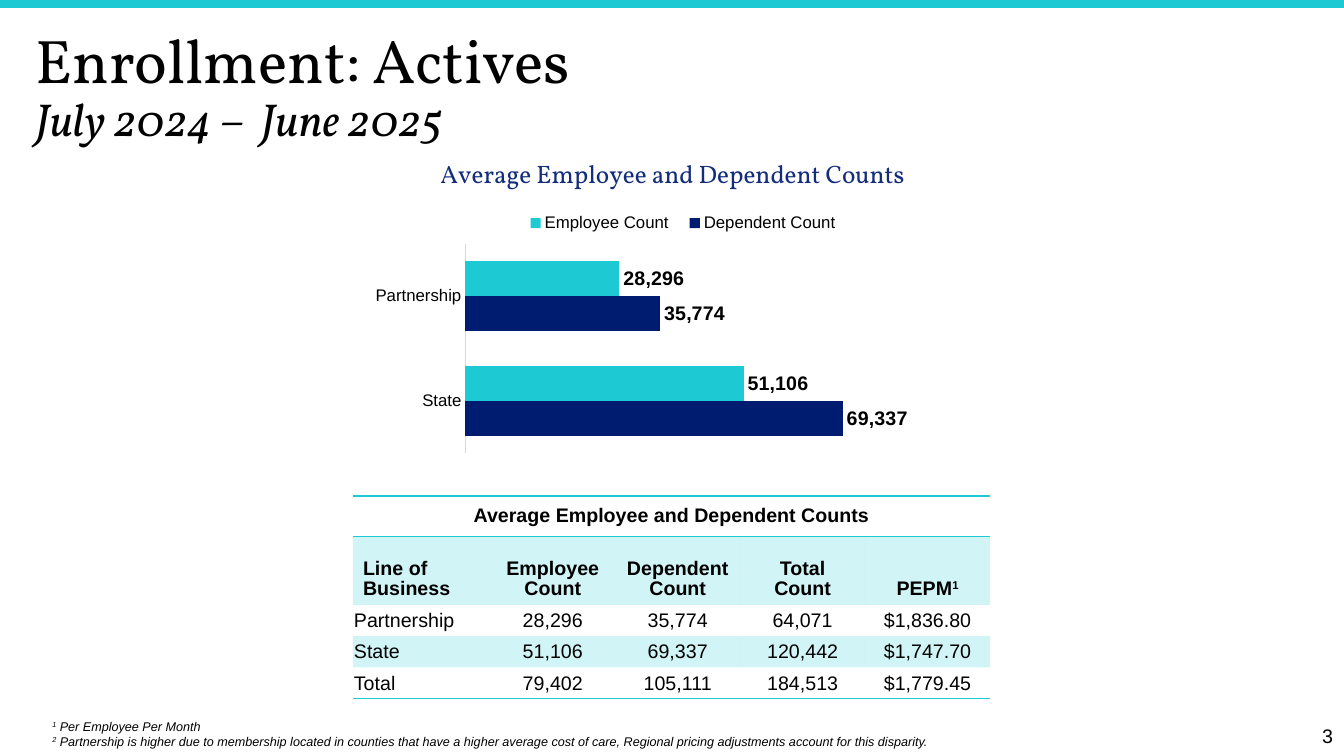
from collections import namedtuple

from lxml import etree
from pptx import Presentation
from pptx.chart.data import CategoryChartData
from pptx.dml.color import RGBColor
from pptx.enum.chart import XL_CHART_TYPE, XL_LABEL_POSITION, XL_LEGEND_POSITION, XL_TICK_MARK
from pptx.enum.shapes import MSO_CONNECTOR
from pptx.enum.text import MSO_ANCHOR, MSO_AUTO_SIZE, PP_ALIGN
from pptx.oxml.ns import qn
from pptx.util import Inches, Pt

BAR = XL_CHART_TYPE.BAR_CLUSTERED
OUTSIDE_END = XL_LABEL_POSITION.OUTSIDE_END
LEGEND_TOP = XL_LEGEND_POSITION.TOP
NO_TICKS = XL_TICK_MARK.NONE
STRAIGHT = MSO_CONNECTOR.STRAIGHT
TOP, MIDDLE, BOTTOM = MSO_ANCHOR.TOP, MSO_ANCHOR.MIDDLE, MSO_ANCHOR.BOTTOM
NO_FIT = MSO_AUTO_SIZE.NONE
LEFT, CENTER, RIGHT = PP_ALIGN.LEFT, PP_ALIGN.CENTER, PP_ALIGN.RIGHT

WIDTH, HEIGHT = Inches(13.33), Inches(7.5)
SANS, SERIF = "Arial", "Vollkorn"
BLACK, TEAL, NAVY, TITLE_BLUE, AXIS_GRAY = "000000", "1DCAD3", "001C71", "132D7C", "D9D9D9"
PLAIN_TABLE = "{2D5ABB26-0587-4C30-8999-92F81FD0307C}"
COUNT_FORMAT = "#,##0"

Box = namedtuple("Box", "left top width height")

CATEGORIES = ("State", "Partnership")
SERIES = (
    ("Dependent Count", (69337, 35774), NAVY),
    ("Employee Count", (51106, 28296), TEAL),
)
COUNTS_TITLE = "Average Employee and Dependent Counts"
HEADINGS = ("Line of Business", "Employee Count", "Dependent Count", "Total Count", "PEPM")
ROWS = (
    ("Partnership", "28,296", "35,774", "64,071", "$1,836.80"),
    ("State", "51,106", "69,337", "120,442", "$1,747.70"),
    ("Total", "79,402", "105,111", "184,513", "$1,779.45"),
)
COLUMN_WEIGHTS = (11, 10, 10, 10, 10)
ROW_WEIGHTS = (4, 6.8, 3.1, 3.1, 3.1)
FOOTNOTES = (
    ("1", " Per Employee Per Month"),
    ("2", " Partnership is higher due to membership located in counties that have a higher "
          "average cost of care, Regional pricing adjustments account for this disparity."),
)


def color(hex_text):
    """Return the colour for a hex string."""
    return RGBColor.from_string(hex_text)


def percent_box(left, top, width, height):
    """Turn percentages of the slide into a box of lengths."""
    return Box(int(WIDTH * left / 100), int(HEIGHT * top / 100),
               int(WIDTH * width / 100), int(HEIGHT * height / 100))


def style_font(font, size, name=SANS, fill=BLACK, bold=False, italic=False):
    """Format a font."""
    font.size, font.name, font.bold, font.italic = Pt(size), name, bold, italic
    font.color.rgb = color(fill)


def add_run(paragraph, text, size, raised=False, **style):
    """Add one formatted run, superscript if raised."""
    run = paragraph.add_run()
    run.text = text
    style_font(run.font, size, **style)
    if raised:
        run.font._element.set("baseline", "30000")


def add_text_frame(slide, box, anchor):
    """Add a wrapping text box and return its frame."""
    frame = slide.shapes.add_textbox(*box).text_frame
    frame.word_wrap, frame.auto_size, frame.vertical_anchor = True, NO_FIT, anchor
    return frame


def add_top_band(slide, box):
    """Draw the thick rule along the top edge."""
    middle = box.top + box.height // 2
    band = slide.shapes.add_connector(STRAIGHT, box.left, middle, box.left + box.width, middle)
    band.line.width, band.line.color.rgb = Pt(6), color(TEAL)
    etree.SubElement(band._element.spPr, qn("a:effectLst"))


def add_title(slide, box):
    """Fill the title placeholder with heading and period."""
    title = slide.shapes.title
    title.left, title.top, title.width, title.height = box
    frame = title.text_frame
    frame.word_wrap, frame.auto_size, frame.vertical_anchor = True, NO_FIT, TOP
    paragraph = frame.paragraphs[0]
    paragraph.alignment, paragraph.line_spacing = LEFT, 0.9
    add_run(paragraph, "Enrollment: Actives", 44, name=SERIF)
    paragraph.add_line_break()
    add_run(paragraph, "July 2024 –  June 2025", 33, name=SERIF, italic=True)


def set_layout(parent, position, shares, inner=False):
    """Fix a chart part at shares of the chart's size."""
    for old_layout in parent.findall(qn("c:layout")):
        parent.remove(old_layout)
    layout = etree.Element(qn("c:layout"))
    manual = etree.SubElement(layout, qn("c:manualLayout"))
    settings = [("layoutTarget", "inner")] if inner else []
    settings += [("xMode", "edge"), ("yMode", "edge"), *zip("xywh", shares)]
    for name, value in settings:
        etree.SubElement(manual, qn(f"c:{name}")).set("val", str(value))
    parent.insert(position, layout)


def add_counts_chart(slide, box):
    """Add the bar chart of employees and dependents."""
    data = CategoryChartData(number_format=COUNT_FORMAT)
    data.categories = CATEGORIES
    for name, values, _ in SERIES:
        data.add_series(name, values)
    chart = slide.shapes.add_chart(BAR, *box, data).chart
    style_font(chart.font, 10)
    chart.has_title = True
    add_run(chart.chart_title.text_frame.paragraphs[0], COUNTS_TITLE, 18,
            name=SERIF, fill=TITLE_BLUE)
    chart.has_legend = True
    legend = chart.legend
    legend.position, legend.include_in_layout = LEGEND_TOP, False
    style_font(legend.font, 12)
    set_layout(legend._element, 1, (0.28, 0.19, 0.47, 0.07))
    set_layout(chart._chartSpace.chart.plotArea, 0, (0.21, 0.28, 0.61, 0.56), inner=True)

    category_axis, value_axis = chart.category_axis, chart.value_axis
    category_axis.major_tick_mark = category_axis.minor_tick_mark = NO_TICKS
    category_axis.format.line.color.rgb = color(AXIS_GRAY)
    category_axis.format.line.width = Pt(0.75)
    style_font(category_axis.tick_labels.font, 12)
    value_axis.visible = value_axis.has_major_gridlines = False
    value_axis.minimum_scale, value_axis.maximum_scale = 0, 80000

    plot = chart.plots[0]
    plot.gap_width, plot.overlap, plot.vary_by_categories = 100, 0, False
    for series, (_, _, fill) in zip(plot.series, SERIES):
        series.format.fill.solid()
        series.format.fill.fore_color.rgb = color(fill)
        labels = series.data_labels
        labels.show_value, labels.position = True, OUTSIDE_END
        labels.number_format, labels.number_format_is_linked = COUNT_FORMAT, False
        style_font(labels.font, 14, bold=True)


def add_border(cell, side):
    """Rule one side of a cell in teal."""
    border = etree.Element(qn(f"a:{side}"), w=str(Pt(1)))
    fill = etree.SubElement(border, qn("a:solidFill"))
    etree.SubElement(fill, qn("a:srgbClr")).set("val", TEAL)
    cell._tc.get_or_add_tcPr().insert(0, border)


def fill_cell(cell, tinted):
    """Give a cell a pale teal fill or none."""
    if not tinted:
        cell.fill.background()
        return
    cell.fill.solid()
    cell.fill.fore_color.rgb = color(TEAL)
    tint = cell._tc.tcPr.find(f"{qn('a:solidFill')}/{qn('a:srgbClr')}")
    etree.SubElement(tint, qn("a:alpha")).set("val", "20000")


def add_counts_table(slide, box):
    """Add the table of counts and cost per employee."""
    texts = ((COUNTS_TITLE, "", "", "", ""), HEADINGS, *ROWS)
    table = slide.shapes.add_table(len(texts), len(HEADINGS), *box).table
    table._tbl.tblPr.find(qn("a:tableStyleId")).text = PLAIN_TABLE
    for column, weight in zip(table.columns, COLUMN_WEIGHTS):
        column.width = int(box.width * weight / sum(COLUMN_WEIGHTS))
    for row, weight in zip(table.rows, ROW_WEIGHTS):
        row.height = int(box.height * weight / sum(ROW_WEIGHTS))
    table.cell(0, 0).merge(table.cell(0, len(HEADINGS) - 1))
    borders = {0: ("lnB", "lnT"), len(texts) - 1: ("lnB",)}
    for row_index, row_texts in enumerate(texts):
        heading = row_index < 2
        for column_index, text in enumerate(row_texts):
            cell = table.cell(row_index, column_index)
            fill_cell(cell, row_index in (1, 3))
            for side in borders.get(row_index, ()):
                add_border(cell, side)
            cell.vertical_anchor = BOTTOM if row_index == 1 else MIDDLE
            if not heading:
                cell.margin_left = cell.margin_right = cell.margin_top = Inches(0.01)
                cell.margin_bottom = 0
            paragraph = cell.text_frame.paragraphs[0]
            paragraph.alignment = LEFT if row_index and not column_index else CENTER
            paragraph.line_spacing = 0.9 if heading else 1.0
            if text:
                add_run(paragraph, text, 14, bold=heading)
            if text == "PEPM":
                add_run(paragraph, "1", 14, raised=True, bold=True)


def add_footnotes(slide, box):
    """Add the numbered footnotes."""
    frame = add_text_frame(slide, box, TOP)
    for index, (mark, note) in enumerate(FOOTNOTES):
        paragraph = frame.add_paragraph() if index else frame.paragraphs[0]
        add_run(paragraph, mark, 9, raised=True, italic=True)
        add_run(paragraph, note, 9, italic=True)


def add_page_number(slide, box):
    """Add the page number in the corner."""
    paragraph = add_text_frame(slide, box, MIDDLE).paragraphs[0]
    paragraph.alignment, paragraph.line_spacing = RIGHT, 0.9
    add_run(paragraph, "3", 14)


def main():
    """Build and save the enrollment slide."""
    presentation = Presentation()
    presentation.slide_width, presentation.slide_height = WIDTH, HEIGHT
    slide = presentation.slides.add_slide(presentation.slide_layouts[5])
    add_top_band(slide, percent_box(0, 0, 100, 0.9))
    add_page_number(slide, percent_box(95.42, 95.87, 4.5, 3.33))
    add_title(slide, percent_box(1.88, 3.33, 96.92, 19.33))
    add_counts_table(slide, percent_box(26.26, 65.6, 47.41, 26.8))
    add_counts_chart(slide, percent_box(23.48, 18.4, 53.11, 49.47))
    add_footnotes(slide, percent_box(3.15, 94.4, 83.12, 5.33))
    presentation.save("out.pptx")


if __name__ == "__main__":
    main()
